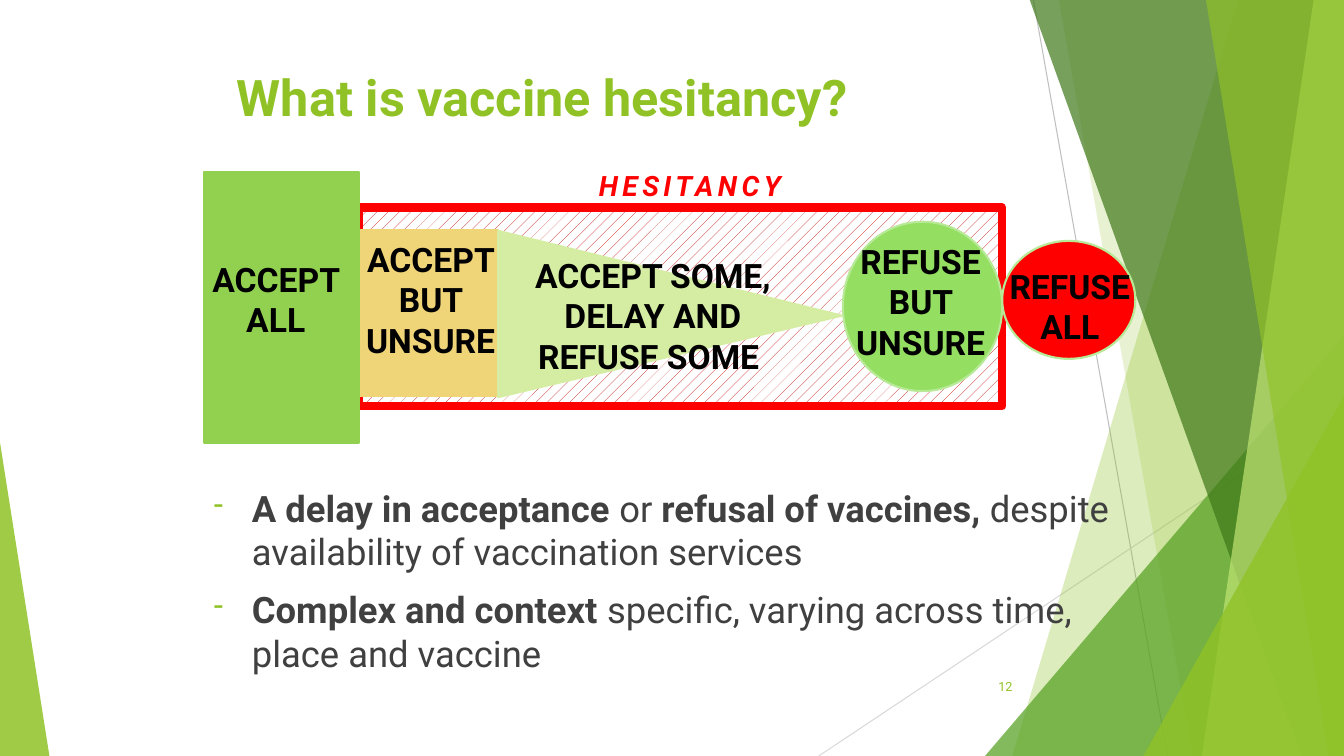
"""Build the vaccine hesitancy slide."""
from lxml import etree
from pptx import Presentation, util as u
from pptx.dml.color import RGBColor
from pptx.enum import dml, shapes, text
from pptx.oxml.ns import qn

PX = 9144
GREEN = "90C226"
KIND = shapes.MSO_SHAPE
ALIGN = text.PP_ALIGN


def rgb(color):
    return RGBColor.from_string(color)


def add_text(box, lines, size, color, align=ALIGN.LEFT, bold=True):
    tf = s.shapes.add_textbox(*[v * PX for v in box]).text_frame
    tf.word_wrap = True
    tf.text = lines
    for p in tf.paragraphs:
        p.alignment = align
        p.font.name = "Roboto"
        p.font.size = u.Pt(size)
        p.font.bold = bold
        p.font.color.rgb = rgb(color)
    return tf


prs = Presentation()
prs.slide_width, prs.slide_height = 1333 * PX, 750 * PX
s = prs.slides.add_slide(prs.slide_layouts[6])

for x1, y1, x2, y2, color in [
    (1025, 0, 1158, 750, "BFBFBF"),
    (1333, 403, 812, 750, "D9D9D9"),
]:
    line = s.shapes.add_connector(
        shapes.MSO_CONNECTOR.STRAIGHT, x1 * PX, y1 * PX, x2 * PX, y2 * PX
    )
    line.line.color.rgb = rgb(color)
    line.line.width = u.Pt(0.75)
    etree.SubElement(line._element.spPr, qn("a:effectLst"))

# Bands list top-left and bottom-left x; triangles list a box and apex position.
facets = [
    ("band", (1228, 1004), GREEN, 30),
    ("band", (1050, 1183), GREEN, 20),
    ("triangle", (977, 333, 356, 417, 1), "54A021", 72),
    ("band", (1021, 1291), "3F7819", 70),
    ("band", (1303, 1192), "C0E474", 70),
    ("band", (1196, 1318), GREEN, 65),
    ("triangle", (1134, 393, 199, 357, 1), GREEN, 80),
    ("triangle", (0, 439, 49, 311, 0), GREEN, 85),
]
for kind, geometry, color, alpha in facets:
    if kind == "band":
        top, bottom = geometry
        outline = s.shapes.build_freeform(top, -1, scale=PX)
        outline.add_line_segments([(1333, -1), (1333, 750), (bottom, 750)])
        sp = outline.convert_to_shape()
    else:
        *box, apex = geometry
        sp = s.shapes.add_shape(KIND.ISOSCELES_TRIANGLE, *[v * PX for v in box])
        sp.adjustments[0] = apex
    sp.shadow.inherit = False
    sp.fill.solid()
    sp.fill.fore_color.rgb = rgb(color)
    clr = sp._element.spPr.find(".//" + qn("a:srgbClr"))
    etree.SubElement(clr, qn("a:alpha"), val=str(alpha * 1000))
    sp.line.fill.background()

frame = s.shapes.add_shape(KIND.RECTANGLE, *[v * PX for v in (356, 206, 638, 197)])
frame.shadow.inherit = False
frame.fill.patterned()
frame.fill.pattern = dml.MSO_PATTERN.PERCENT_10
frame.fill.fore_color.rgb = rgb("C00000")
frame.fill.back_color.rgb = rgb("FFFFFF")
frame.line.color.rgb = rgb("FF0000")
frame.line.width = u.Pt(6)

add_text((225, 61, 900, 125), "What is vaccine hesitancy?", 36, GREEN)

points = [
    [("A delay in acceptance ", True), ("or ", False),
     ("refusal of vaccines, ", True),
     ("despite availability of vaccination services", False)],
    [("Complex and context ", True),
     ("specific, varying across time, place and vaccine", False)],
]
tf = add_text((202, 477, 916, 228), "\n", 26, "404040", bold=None)
for p, parts in zip(tf.paragraphs, points):
    for words, bold in parts:
        r = p.add_run()
        r.text = words
        r.font.bold = bold
    p.space_before = u.Pt(10)
    pPr = p._p.get_or_add_pPr()
    pPr.set("marL", str(38 * PX))
    pPr.set("indent", str(-38 * PX))
    bullet_color = etree.Element(qn("a:buClr"))
    etree.SubElement(bullet_color, qn("a:srgbClr"), val=GREEN)
    defaults = pPr.find(qn("a:defRPr"))
    defaults.addprevious(bullet_color)
    defaults.addprevious(etree.Element(qn("a:buSzPct"), val="80000"))
    defaults.addprevious(etree.Element(qn("a:buChar"), char="-"))

tf = add_text((939, 661, 75, 40), "12", 9, GREEN, ALIGN.RIGHT, False)
tf.vertical_anchor = text.MSO_ANCHOR.MIDDLE

stages = [
    (KIND.RECTANGLE, (353, 228, 141, 165), "F0D578", "F0D578"),
    (KIND.OVAL, (836, 220, 158, 168), "94DE61", "B7E996"),
    (KIND.OVAL, (994, 239, 132, 117), "FF0000", "B7E996"),
    (KIND.RECTANGLE, (202, 171, 154, 268), "92D050", "92D050"),
    (KIND.ISOSCELES_TRIANGLE, (582, 141, 165, 341), "D5EDA2", "D5EDA2"),
]
for kind, box, fill, edge in stages:
    sp = s.shapes.add_shape(kind, *[v * PX for v in box])
    sp.shadow.inherit = False
    sp.fill.solid()
    sp.fill.fore_color.rgb = rgb(fill)
    sp.line.color.rgb = rgb(edge)
    sp.line.width = u.Pt(1.5)
    if kind == KIND.ISOSCELES_TRIANGLE:
        sp.rotation = 90
        sp.adjustments[0] = 0.51

for box, label in [
    ((191, 252, 165, 91), "ACCEPT ALL"),
    ((492, 248, 311, 131), "ACCEPT SOME, DELAY AND REFUSE SOME "),
    ((338, 232, 178, 131), "ACCEPT BUT UNSURE"),
    ((990, 259, 142, 91), "REFUSE\nALL"),
    ((832, 234, 162, 131), "REFUSE BUT UNSURE"),
]:
    add_text(box, label, 24, "000000", ALIGN.CENTER)

p = add_text((584, 162, 248, 44), "HESITANCY", 20, "FF0000").paragraphs[0]
p.font.italic = True
p.font._rPr.set("spc", "320")

prs.save("out.pptx")
